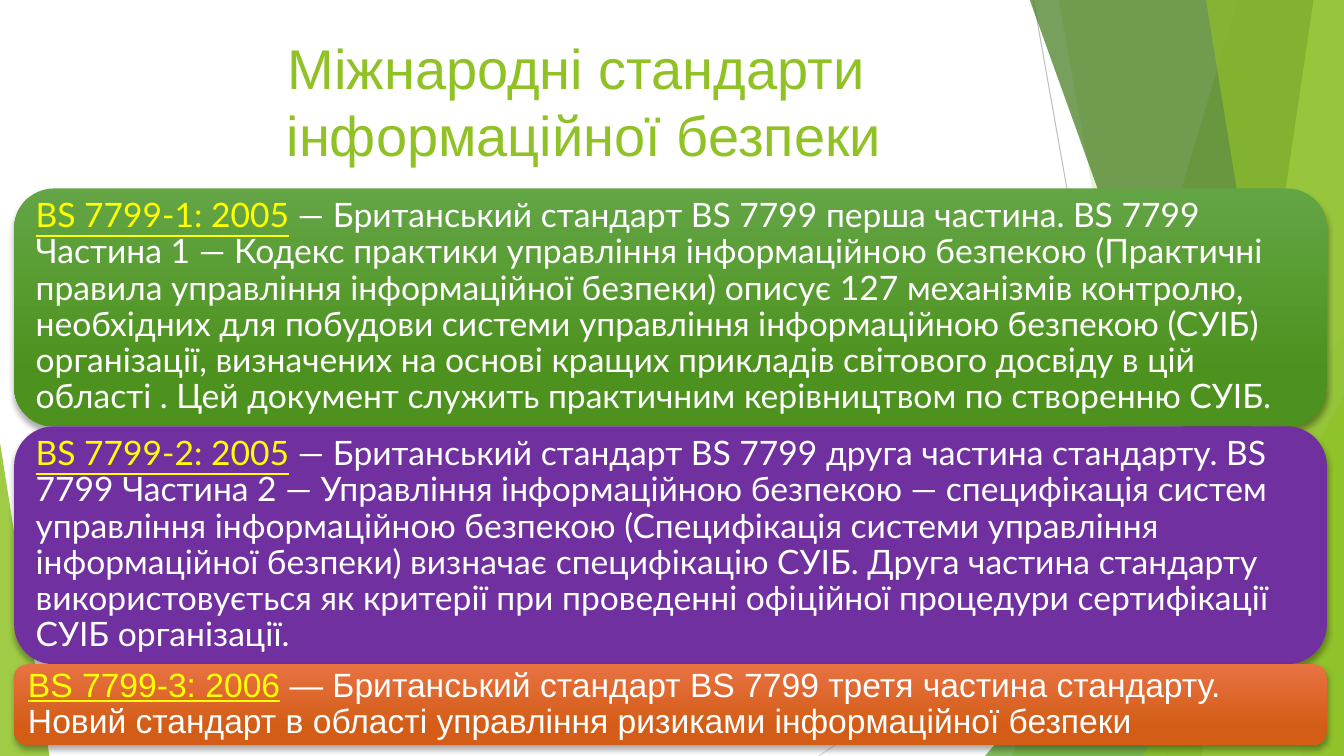
from lxml import etree
from pptx import Presentation
from pptx import util as u
from pptx.dml.color import RGBColor
from pptx.enum import shapes, text
from pptx.oxml import ns

Inches, Pt = u.Inches, u.Pt
SLIDE_W, SLIDE_H = 13.33, 7.5

COLORS = {
    "white": "FFFFFF",
    "lime": "90C226",
    "green": "54A021",
    "forest": "3F7819",
    "pale": "C0E474",
    "line": "BFBFBF",
    "line_light": "D9D9D9",
    "term": "FFFF00",
    "purple": "7030A0",
    "green_top": "63A545",
    "green_bottom": "4D921E",
    "orange_top": "E87242",
    "orange_bottom": "D35D16",
    "shadow": "000000",
}

LINES = [
    ((10.25, 0), (11.58, 7.5), "line"),
    ((13.33, 4.03), (8.12, 7.5), "line_light"),
]

BACK_FACETS = [(12.28, 10.04, "lime", 30), (10.5, 11.83, "lime", 20)]
FRONT_FACETS = [
    (10.21, 12.91, "forest", 70),
    (13.03, 11.92, "pale", 70),
    (11.96, 13.18, "lime", 65),
]

CARDS = [
    (2.36, "Lato", ("green_top", "green_bottom"), "BS 7799-1: 2005",
     "\u00a0— Британський стандарт BS 7799 перша частина. BS 7799 Частина 1\u00a0— "
     "Кодекс практики управління інформаційною безпекою (Практичні правила "
     "управління інформаційної безпеки) описує 127 механізмів контролю, "
     "необхідних для побудови системи управління інформаційною безпекою (СУІБ) "
     "організації, визначених на основі кращих прикладів світового досвіду в цій "
     "області . Цей документ служить практичним керівництвом по створенню СУІБ."),
    (2.36, "Lato", ("purple",), "BS 7799-2: 2005",
     "\u00a0— Британський стандарт BS 7799 друга частина стандарту. BS 7799 "
     "Частина 2\u00a0— Управління інформаційною безпекою\u00a0— специфікація систем "
     "управління інформаційною безпекою (Специфікація системи управління "
     "інформаційної безпеки) визначає специфікацію СУІБ. Друга частина стандарту "
     "використовується як критерії при проведенні офіційної процедури "
     "сертифікації СУІБ організації."),
    (0.8, "Arial", ("orange_top", "orange_bottom"), "BS 7799-3: 2006",
     "\u00a0— Британський стандарт BS 7799 третя частина стандарту. Новий стандарт "
     "в області управління ризиками інформаційної безпеки"),
]


def rgb(name):
    return RGBColor.from_string(COLORS[name])


def add_line(s, start, end, color):
    c = s.shapes.add_connector(
        shapes.MSO_CONNECTOR.STRAIGHT, *map(Inches, start + end))
    c.line.color.rgb = rgb(color)
    c.line.width = Pt(0.75)
    etree.SubElement(c._element.spPr, ns.qn("a:effectLst"))


def fill_translucent(sp, color, opacity):
    sp.shadow.inherit = False
    sp.line.fill.background()
    sp.fill.solid()
    sp.fill.fore_color.rgb = rgb(color)
    clr = sp._element.spPr.find(".//" + ns.qn("a:srgbClr"))
    etree.SubElement(clr, ns.qn("a:alpha"), val=str(opacity * 1000))


def add_facet(s, top_x, bottom_x, color, opacity):
    top = Inches(-0.01)
    right, bottom = Inches(SLIDE_W), Inches(SLIDE_H)
    outline = s.shapes.build_freeform(Inches(top_x), top)
    outline.add_line_segments(
        [(right, top), (right, bottom), (Inches(bottom_x), bottom)], close=True)
    fill_translucent(outline.convert_to_shape(), color, opacity)


def add_triangle(s, left, width, height, apex, color, opacity):
    sp = s.shapes.add_shape(
        shapes.MSO_SHAPE.ISOSCELES_TRIANGLE, Inches(left),
        Inches(SLIDE_H - height), Inches(width), Inches(height))
    sp.adjustments[0] = apex
    fill_translucent(sp, color, opacity)


def add_run(p, content, font, size, color, underline=False):
    r = p.add_run()
    r.text = content
    r.font.name = font
    r.font.size = Pt(size)
    r.font.color.rgb = rgb(color)
    r.font.underline = underline


def add_title(s, lines):
    title = s.shapes.title
    s.shapes._spTree.append(title._element)
    title.left, title.top = Inches(1.09), Inches(0.28)
    title.width, title.height = Inches(9.4), Inches(1.44)
    tf = title.text_frame
    tf.word_wrap = True
    tf.vertical_anchor = text.MSO_ANCHOR.MIDDLE
    p = tf.paragraphs[0]
    p.alignment = text.PP_ALIGN.CENTER
    for i, line in enumerate(lines):
        if i:
            p.add_line_break()
        add_run(p, line, "Arial", 40, "lime")


def fill_card(sp, colors):
    if len(colors) == 1:
        sp.fill.solid()
        sp.fill.fore_color.rgb = rgb(colors[0])
        return
    sp.fill.gradient()
    sp.fill.gradient_angle = 270
    for stop, color, position in zip(sp.fill.gradient_stops, colors, (0, 0.78)):
        stop.color.rgb = rgb(color)
        stop.position = position


def add_shadow(sp):
    sp.shadow.inherit = False
    effects = sp._element.spPr.find(ns.qn("a:effectLst"))
    shadow = etree.SubElement(
        effects, ns.qn("a:outerShdw"), blurRad=str(Pt(4)), dist=str(Pt(3)),
        dir="5400000", rotWithShape="0")
    clr = etree.SubElement(shadow, ns.qn("a:srgbClr"), val=COLORS["shadow"])
    etree.SubElement(clr, ns.qn("a:alpha"), val="35000")


def add_card(s, top, height, font, colors, term, description):
    sp = s.shapes.add_shape(
        shapes.MSO_SHAPE.ROUNDED_RECTANGLE, Inches(0.14), Inches(top),
        Inches(13.02), Inches(height))
    fill_card(sp, colors)
    sp.line.fill.background()
    add_shadow(sp)
    tf = sp.text_frame
    tf.word_wrap = True
    tf.vertical_anchor = text.MSO_ANCHOR.MIDDLE
    tf.margin_left = tf.margin_right = Inches(0.1)
    tf.margin_top = tf.margin_bottom = Inches(0.1)
    p = tf.paragraphs[0]
    p.alignment = text.PP_ALIGN.LEFT
    p.line_spacing = 0.9
    add_run(p, term, font, 24, "term", underline=True)
    add_run(p, description, font, 24, "white")


def main():
    prs = Presentation()
    prs.slide_width, prs.slide_height = Inches(SLIDE_W), Inches(SLIDE_H)
    s = prs.slides.add_slide(prs.slide_layouts[5])
    for line in LINES:
        add_line(s, *line)
    for facet in BACK_FACETS:
        add_facet(s, *facet)
    add_triangle(s, 9.77, 3.56, 4.17, 1, "green", 72)
    for facet in FRONT_FACETS:
        add_facet(s, *facet)
    add_triangle(s, 11.34, 1.99, 3.57, 1, "lime", 80)
    add_triangle(s, 0, 0.49, 3.11, 0, "lime", 85)
    add_title(s, ["Міжнародні стандарти ", "інформаційної безпеки"])
    top = 1.87
    for height, *content in CARDS:
        add_card(s, top, height, *content)
        top += height
    prs.save("out.pptx")


if __name__ == "__main__":
    main()
